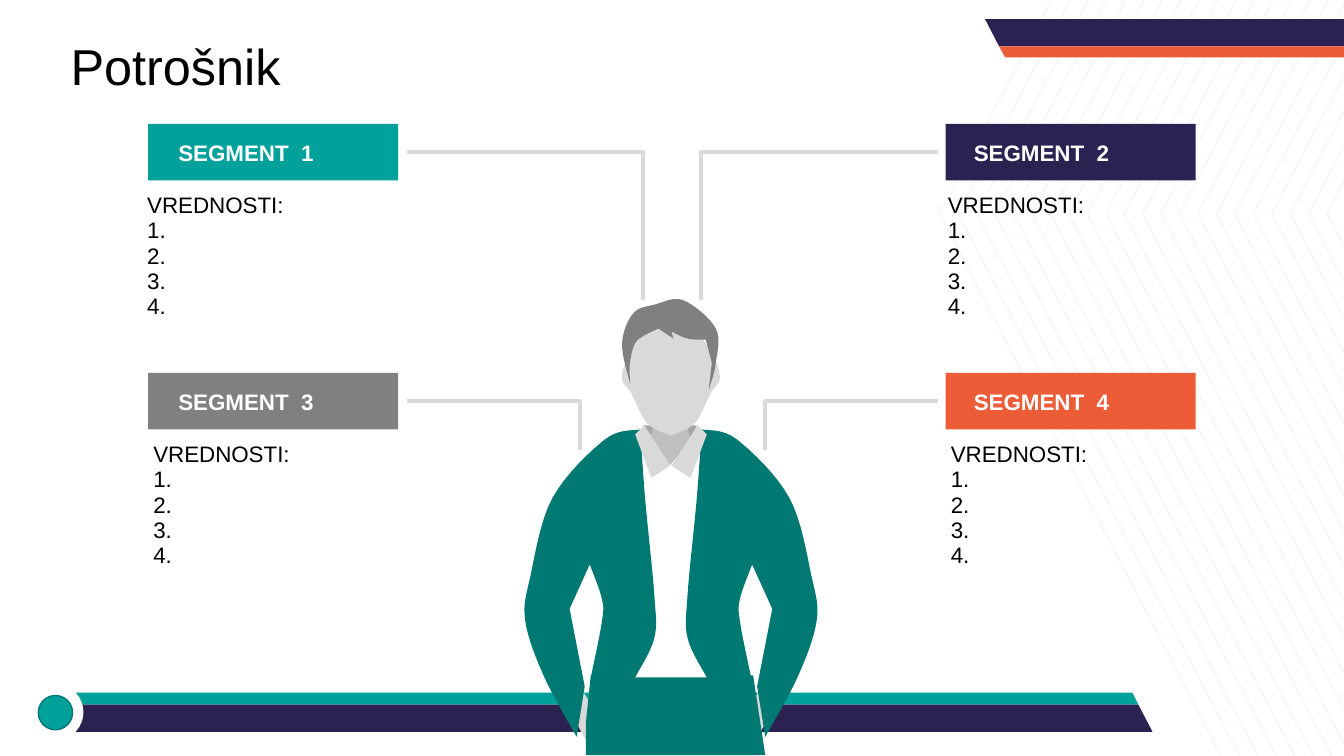
from pptx import Presentation
from pptx.dml.color import RGBColor
from pptx.enum.shapes import MSO_SHAPE
from pptx.enum.text import MSO_ANCHOR, PP_ALIGN
from pptx.util import Inches, Pt

TEAL = RGBColor(0x00, 0xA1, 0x9A)
DEEP = RGBColor(0x00, 0x79, 0x73)
RIM = RGBColor(0x00, 0x77, 0x72)
NAVY = RGBColor(0x2B, 0x22, 0x52)
ORANGE = RGBColor(0xEB, 0x5C, 0x37)
GRAY = RGBColor(0x80, 0x80, 0x80)
SHADE = RGBColor(0xA6, 0xA6, 0xA6)
SILVER = RGBColor(0xBF, 0xBF, 0xBF)
PALE = RGBColor(0xD9, 0xD9, 0xD9)
FAINT = RGBColor(0xF4, 0xF4, 0xF4)
WHITE = RGBColor(0xFF, 0xFF, 0xFF)
BLACK = RGBColor(0x00, 0x00, 0x00)
RIGHT = 13.33
TWICE = 13.31  # a point and its mirror on the figure add up to this
STEPS = 8

deck = Presentation()
deck.slide_width, deck.slide_height = Inches(RIGHT), Inches(7.5)
slide = deck.slides.add_slide(deck.slide_layouts[5])
shapes = slide.shapes


def draw(color, *runs, flip=False, width=None):
    """Join runs of points into a filled outline, or an open line if width is set.

    A run of three or more points is a smooth curve when several runs are given.
    """
    dots = []
    for run in runs:
        if len(runs) == 1 or len(run) < 3:
            dots += run
            continue
        ends = [run[0], *run, run[-1]]
        for a, b, c, d in zip(ends, ends[1:], ends[2:], ends[3:]):
            for step in range(STEPS):
                t = step / STEPS
                dots.append([(2 * q + (r - p) * t + (2 * p - 5 * q + 4 * r - s) * t ** 2
                              + (3 * q - p - 3 * r + s) * t ** 3) / 2
                             for p, q, r, s in zip(a, b, c, d)])
        dots.append(run[-1])
    dots = [(Inches(TWICE - x if flip else x), Inches(y)) for x, y in dots]
    pen = shapes.build_freeform(*dots[0])
    pen.add_line_segments(dots[1:], close=width is None)
    shape = pen.convert_to_shape()
    shape.shadow.inherit = False
    if width:
        shape.fill.background()
        shape.line.color.rgb = color
        shape.line.width = Pt(width)
    else:
        shape.fill.solid()
        shape.fill.fore_color.rgb = color
        shape.line.fill.background()


def write(text, box, shape=None, size=16, color=BLACK, bold=False, pad=(0, 0),
          anchor=MSO_ANCHOR.TOP, lead=None, gap=0):
    shape = shape or shapes.add_textbox(0, 0, 0, 0)
    shape.left, shape.top, shape.width, shape.height = map(Inches, box)
    frame = shape.text_frame
    frame.text = text
    frame.word_wrap = True
    frame.vertical_anchor = anchor
    frame.margin_left = frame.margin_right = Inches(pad[0])
    frame.margin_top = frame.margin_bottom = Inches(pad[1])
    for index, para in enumerate(frame.paragraphs):
        para.alignment = PP_ALIGN.LEFT
        para.line_spacing = lead
        para.space_before = Pt(gap if index else 0)
        para.font.name, para.font.size, para.font.bold = "Arial", Pt(size), bold
        para.font.color.rgb = color


# Chevron lines, cut at the right edge
for index in range(22):
    x = 9.32 + index * 0.183
    room = RIGHT - x
    rise, fall = min(1, room / 1.11), min(1, room / 2.79)
    draw(FAINT, [(x + 1.11 * rise, 2.12 * (1 - rise)), (x, 2.12),
                 (x + 2.79 * fall, 2.12 + 5.38 * fall)], width=0.75)

# Footer and corner bands, each with one slanted end
for color, side, top, low, tip, foot in (
        (TEAL, 0.54, 6.87, 6.99, 11.23, 11.29), (NAVY, 0.54, 6.99, 7.26, 11.29, 11.43),
        (NAVY, RIGHT, 0.19, 0.46, 9.77, 9.91), (ORANGE, RIGHT, 0.46, 0.57, 9.91, 9.97)):
    draw(color, [(side, top), (tip, top), (foot, low), (side, low)])

for x, y, size, color, edge in ((0.27, 6.79, 0.55, WHITE, WHITE), (0.38, 6.9, 0.34, TEAL, RIM)):
    disc = shapes.add_shape(MSO_SHAPE.OVAL, Inches(x), Inches(y), Inches(size), Inches(size))
    disc.shadow.inherit = False
    disc.fill.solid()
    disc.fill.fore_color.rgb = color
    disc.line.color.rgb = edge
    disc.line.width = Pt(1)

# Figure
lapel = [(6.35, 4.26), (6.4, 4.96), (6.49, 5.9), (6.49, 6.33), (6.3, 6.72)]
waist = [(5.86, 6.72), (5.97, 6.17), (5.97, 5.94), (5.85, 5.6)]
cuff = [(5.65, 6.04), (5.8, 6.81)]
sleeve = [(5.72, 7.31), (5.4, 6.72), (5.21, 6.16), (5.26, 5.72), (5.48, 4.94), (6, 4.36),
          (6.35, 4.26)]
cheek = [(6.5, 3.15), (6.25, 3.5), (6.17, 3.75), (6.26, 3.9), (6.42, 4.2), (6.65, 4.32)]
crown = [(6.25, 3.81), (6.17, 3.41), (6.28, 3.11), (6.5, 3.02), (6.78, 2.98), (7.1, 3.26),
         (7.1, 3.6), (7.03, 3.87)]
fringe = [(7, 3.37), (6.82, 3.36), (6.66, 3.29)]
temple = [(6.53, 3.26), (6.32, 3.38), (6.25, 3.59), (6.25, 3.81)]
sides = (False, True)

for flip in sides:
    draw(PALE, [(5.77, 6.84), (5.84, 6.95), (5.81, 7.34), (5.71, 7.16)], flip=flip)
draw(DEEP, [(5.86, 6.7), (5.81, 7.18), (5.81, 7.49), (7.59, 7.49), (7.47, 6.7)])
draw(WHITE, lapel, [(TWICE - x, y) for x, y in reversed(lapel)])
for flip in sides:
    draw(DEEP, lapel, waist, cuff, sleeve, flip=flip)
draw(SHADE, [(6.38, 4.22), (6.91, 4.22), (6.85, 4.37), (6.43, 4.37)])
draw(SILVER, [(6.5, 4.16), (6.8, 4.16), (6.85, 4.38), (6.64, 4.62), (6.44, 4.38)])
for flip in sides:
    draw(PALE, [(6.39, 4.22), (6.65, 4.62), (6.46, 4.74), (6.3, 4.31)], flip=flip)
draw(PALE, cheek, [(TWICE - x, y) for x, y in reversed(cheek)])
draw(GRAY, crown, [(7.06, 3.6)], fringe, [(6.68, 3.36)], temple)

# Segments: color, box left, label left, list left, line start, line turn
rows = (
    (1.23, 2.98, ((TEAL, 1.47, 1.67, 1.41, 4.04, 6.38), (NAVY, 9.38, 9.56, 9.35, 9.3, 6.95))),
    (3.7, 4.46, ((GRAY, 1.47, 1.67, 1.47, 4.04, 5.75), (ORANGE, 9.38, 9.56, 9.38, 9.3, 7.59))),
)
number = 0
for top, end, row in rows:
    for color, left, label, items, start, turn in row:
        number += 1
        block = shapes.add_shape(MSO_SHAPE.RECTANGLE, Inches(left), Inches(top),
                                 Inches(2.48), Inches(0.56))
        block.shadow.inherit = False
        block.fill.solid()
        block.fill.fore_color.rgb = color
        block.line.fill.background()
        draw(PALE, [(turn, end), (turn, top + 0.28), (start, top + 0.28)], width=3)
        write(f"SEGMENT  {number}", (label, top + 0.1, 2.08, 0.37), color=WHITE, bold=True,
              pad=(0.1, 0.05), anchor=MSO_ANCHOR.MIDDLE)
        write("VREDNOSTI:\n1.\n2.\n3.\n4.", (items, top + 0.69, 2.48, 1.32),
              pad=(0.05, 0.03), lead=Pt(15), gap=3.2)

write("Potrošnik", (0.7, 0.42, 11.88, 0.55), shape=shapes.title, size=36, lead=0.9)
deck.save("out.pptx")
